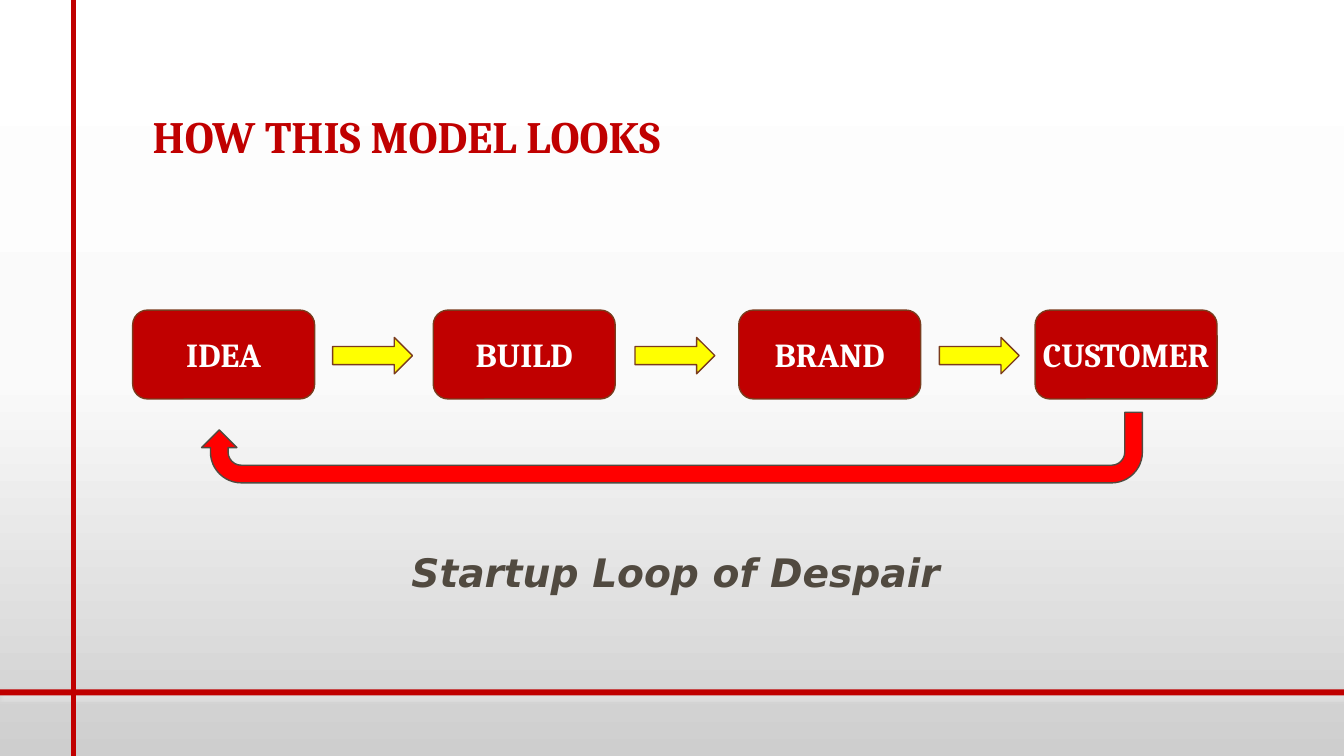
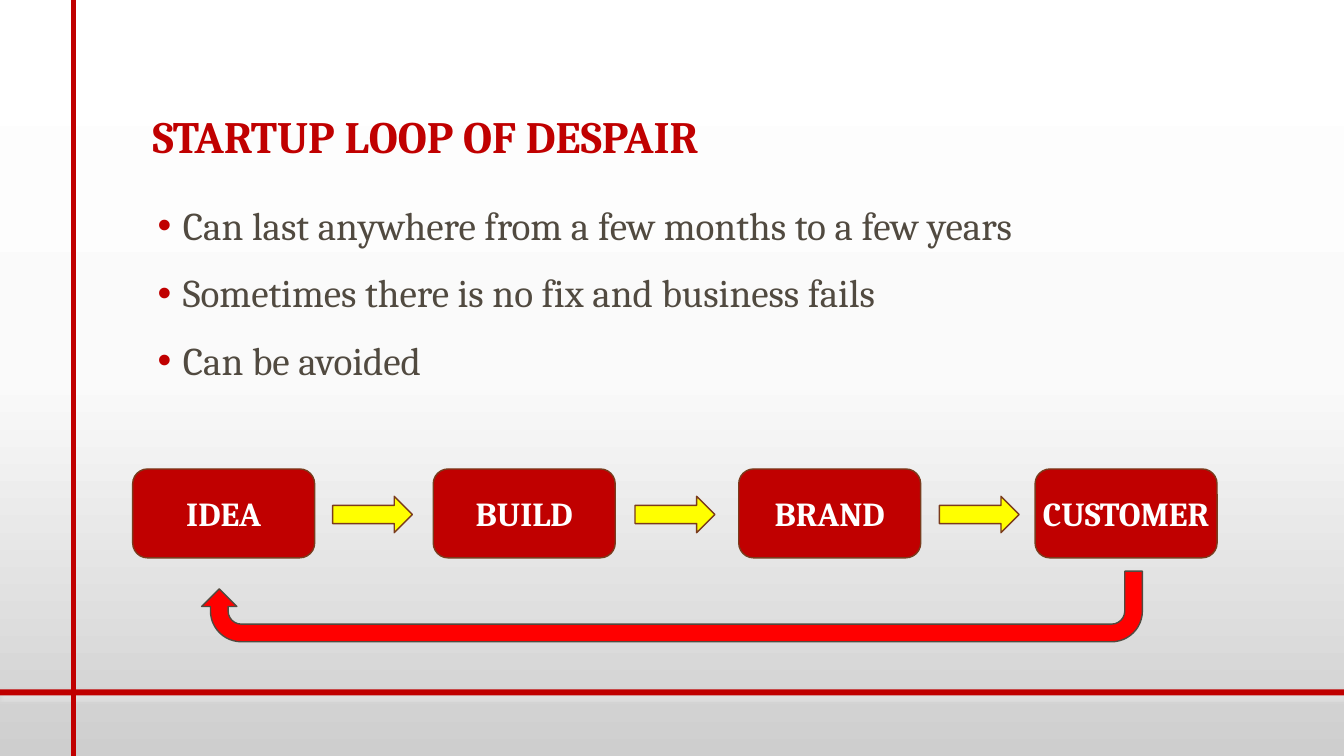
"""Builds two slides about the startup loop of despair."""
from dataclasses import dataclass

from lxml.etree import SubElement
from pptx import Presentation
from pptx.dml.color import RGBColor
from pptx.enum.shapes import MSO_CONNECTOR as Connector, MSO_SHAPE as Preset
from pptx.enum.text import MSO_ANCHOR as Anchor, PP_ALIGN as Align
from pptx.oxml.ns import qn
from pptx.util import Pt


@dataclass(frozen=True)
class Theme:
    """Colours, fonts and type sizes of the deck."""
    red: str = "C00000"
    bright_red: str = "FF0000"
    yellow: str = "FFFF00"
    brown: str = "7A3B1D"
    ink: str = "514A40"
    white: str = "FFFFFF"
    backdrop: tuple = ((0, "FFFFFF"), (50, "FAFAFA"), (100, "CECECE"))
    font: str = "Cambria"
    caption_font: str = "DejaVu Sans"
    title_size: int = 32
    body_size: int = 28
    step_size: int = 24


THEME = Theme()
WIDTH, HEIGHT = 960, 540
STEPS = (("IDEA", 94.8), ("BUILD", 309.5), ("BRAND", 527.7), ("CUSTOMER", 739.4))
ARROW_LEFTS = (237.6, 453.6, 671)
STEP_WIDTH, STEP_HEIGHT = 130, 63.5


def add_node(parent, tag, **attributes):
    """Append a drawing element with the given attributes."""
    return SubElement(parent, qn(tag), {name: str(value) for name, value in attributes.items()})


def add_bullet(paragraph):
    """Give a paragraph a hanging red bullet."""
    properties = paragraph._p.get_or_add_pPr()
    properties.set("marL", str(Pt(21.6)))
    properties.set("indent", str(-Pt(18)))
    add_node(add_node(properties, "a:buClr"), "a:srgbClr", val=THEME.red)
    add_node(properties, "a:buFont", typeface="Arial")
    add_node(properties, "a:buChar", char="•")


def write_text(frame, text, *, size, color, font=THEME.font, bold=False, italic=False,
               align=Align.LEFT, anchor=Anchor.TOP, line_spacing=None, gap=0, bullets=False):
    """Fill a text frame with one formatted paragraph per line."""
    frame.vertical_anchor = anchor
    for index, line in enumerate(text.split("\n")):
        paragraph = frame.add_paragraph() if index else frame.paragraphs[0]
        paragraph.alignment = align
        if line_spacing:
            paragraph.line_spacing = line_spacing
        if index and gap:
            paragraph.space_before = Pt(gap)
        if bullets:
            add_bullet(paragraph)
        run = paragraph.add_run()
        run.text = line
        run.font.name, run.font.size = font, Pt(size)
        run.font.bold, run.font.italic = bold, italic
        run.font.color.rgb = RGBColor.from_string(color)


def add_text_box(slide, text, left, top, width, height, **text_format):
    """Add a wrapping text box."""
    frame = slide.shapes.add_textbox(Pt(left), Pt(top), Pt(width), Pt(height)).text_frame
    frame.word_wrap = True
    write_text(frame, text, **text_format)


def add_preset(slide, preset, left, top, width, height, fill, line=None):
    """Add a flat preset shape, outlined if a line colour is given."""
    shape = slide.shapes.add_shape(preset, Pt(left), Pt(top), Pt(width), Pt(height))
    shape.shadow.inherit = False
    shape.fill.solid()
    shape.fill.fore_color.rgb = RGBColor.from_string(fill)
    if line:
        shape.line.color.rgb = RGBColor.from_string(line)
        shape.line.width = Pt(1)
    else:
        shape.line.fill.background()
    return shape


def set_backdrop(master):
    """Give the master a vertical three-stop gradient."""
    fill = master.background.fill
    fill.gradient()
    fill.gradient_angle = 270
    stops = master.element.find(".//" + qn("a:gsLst"))
    for stop in list(stops):
        stops.remove(stop)
    for position, color in THEME.backdrop:
        add_node(add_node(stops, "a:gs", pos=position * 1000), "a:srgbClr", val=color)


def add_frame_lines(slide):
    """Draw the red band at the foot and the red line at the left."""
    band = add_preset(slide, Preset.RECTANGLE, 0, 492.5, WIDTH, 4.3, THEME.red)
    effects = band._element.spPr.find(qn("a:effectLst"))
    shadow = add_node(effects, "a:outerShdw", blurRad=Pt(2), dist=Pt(2), dir=5400000)
    add_node(add_node(shadow, "a:srgbClr", val=THEME.white), "a:alpha", val=40000)
    line = slide.shapes.add_connector(Connector.STRAIGHT, Pt(52.6), 0, Pt(52.6), Pt(HEIGHT))
    line.line.color.rgb = RGBColor.from_string(THEME.red)
    line.line.width = Pt(4)
    add_node(line._element.spPr, "a:effectLst")


def add_titled_slide(presentation, title):
    """Add a slide with the shared lines and title style."""
    slide = presentation.slides.add_slide(presentation.slide_layouts[6])
    add_frame_lines(slide)
    add_text_box(slide, title, 102, 30, 756, 90, size=THEME.title_size, color=THEME.red,
                 bold=True, anchor=Anchor.BOTTOM, line_spacing=0.9)
    return slide


def add_step(slide, label, left, top):
    """Add one labelled step of the loop."""
    step = add_preset(slide, Preset.ROUNDED_RECTANGLE, left, top, STEP_WIDTH, STEP_HEIGHT,
                      THEME.red, THEME.brown)
    frame = step.text_frame
    frame.word_wrap = False
    frame.margin_left = frame.margin_right = 0
    write_text(frame, label, size=THEME.step_size, color=THEME.white, bold=True,
               align=Align.CENTER, anchor=Anchor.MIDDLE)


def add_loop(slide, top):
    """Draw the steps, the arrows between them and the arrow back."""
    for label, left in STEPS:
        add_step(slide, label, left, top)
    for left in ARROW_LEFTS:
        add_preset(slide, Preset.RIGHT_ARROW, left, top + 19.5, 57, 26,
                   THEME.yellow, THEME.brown)
    back = add_preset(slide, Preset.U_TURN_ARROW, 144, top + 73, 672, 50.4,
                      THEME.bright_red, THEME.ink)
    back.rotation = 180


def main():
    """Build and save the presentation."""
    presentation = Presentation()
    presentation.slide_width, presentation.slide_height = Pt(WIDTH), Pt(HEIGHT)
    set_backdrop(presentation.slide_master)

    model = add_titled_slide(presentation, "HOW THIS MODEL LOOKS")
    add_loop(model, 221.5)
    add_text_box(model, "Startup Loop of Despair", 217.5, 388, 530, 41, size=THEME.body_size,
                 color=THEME.ink, font=THEME.caption_font, bold=True, italic=True,
                 align=Align.CENTER)

    despair = add_titled_slide(presentation, "STARTUP LOOP OF DESPAIR")
    add_text_box(despair, "Can last anywhere from a few months to a few years\n"
                 "Sometimes there is no fix and business fails\nCan be avoided",
                 102, 144, 756, 324, size=THEME.body_size, color=THEME.ink,
                 line_spacing=0.9, gap=18, bullets=True)
    add_loop(despair, 335)

    presentation.save("out.pptx")


if __name__ == "__main__":
    main()
